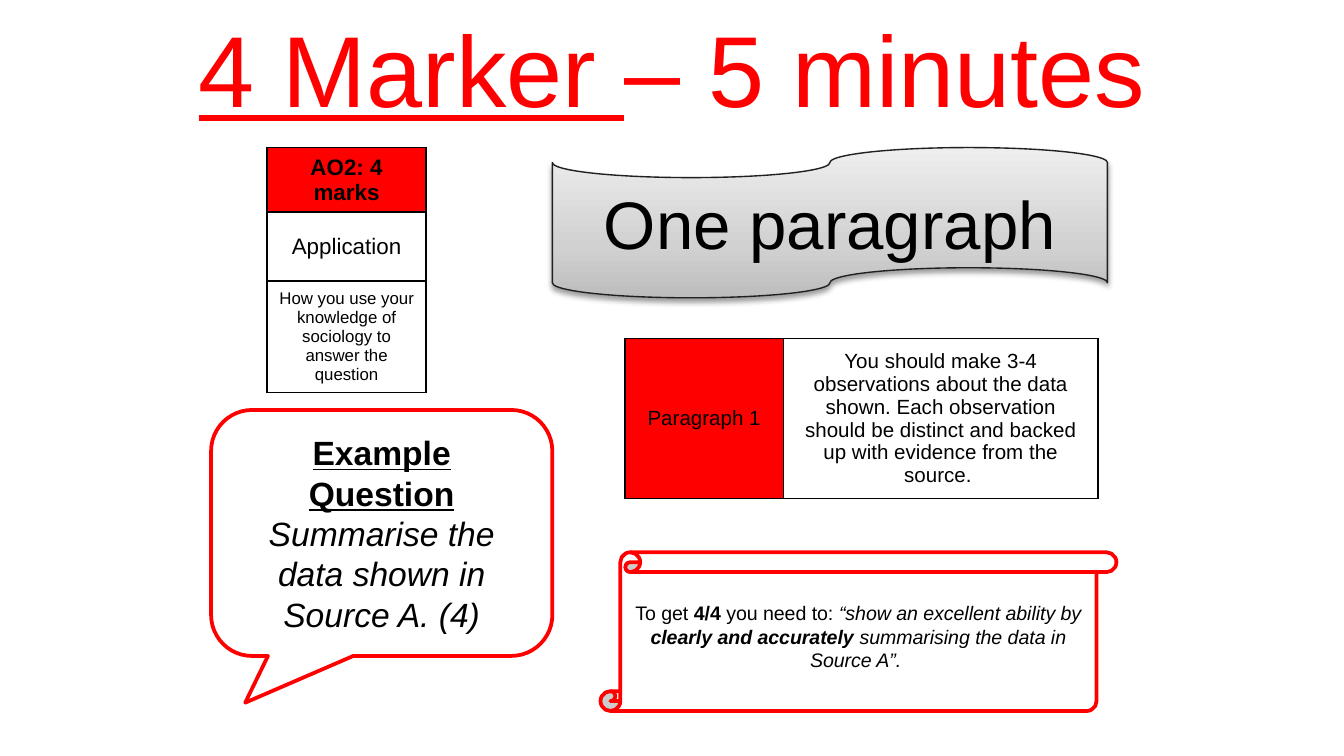
"""Build a revision slide on answering a four-mark question."""
from lxml import etree
from pptx import Presentation
from pptx.dml.color import RGBColor
from pptx.enum.shapes import MSO_SHAPE
from pptx.enum.text import MSO_ANCHOR, PP_ALIGN
from pptx.oxml import parse_xml
from pptx.oxml.ns import nsdecls, qn
from pptx.util import Cm, Pt

TAPE = MSO_SHAPE.FLOWCHART_PUNCHED_TAPE
CALLOUT = MSO_SHAPE.ROUNDED_RECTANGULAR_CALLOUT
SCROLL = MSO_SHAPE.VERTICAL_SCROLL
MIDDLE = MSO_ANCHOR.MIDDLE
CENTER = PP_ALIGN.CENTER
FONT = "Arial"
RED, BLACK, WHITE = "FF0000", "000000", "FFFFFF"
SILVER_STOPS = [(0, "BDBDBD"), (35, "D1D1D1"), (100, "EEEEEE")]


def rgb(value):
    """Turn a hex string into a colour."""
    return RGBColor.from_string(value)


def write_text(frame, paragraphs, size, color=BLACK):
    """Write centred paragraphs of (text, style) runs; style letters are b, i and u."""
    frame.word_wrap = True
    for index, runs in enumerate(paragraphs):
        para = frame.paragraphs[0] if index == 0 else frame.add_paragraph()
        para.alignment = CENTER
        for text, style in runs:
            span = para.add_run()
            span.text = text
            font = span.font
            font.name, font.size = FONT, Pt(size)
            font.color.rgb = rgb(color)
            font.bold = "b" in style
            font.italic = "i" in style
            font.underline = "u" in style


def add_title(page, runs):
    """Add the large heading across the top."""
    box = page.shapes.add_textbox(Cm(3.18), Cm(0), Cm(19.05), Cm(2.57))
    write_text(box.text_frame, [runs], 54, RED)


def add_panel(page, kind, place, paragraphs, size, line=RED, width=2):
    """Add a white outlined preset shape with centred text."""
    panel = page.shapes.add_shape(kind, *map(Cm, place))
    panel.shadow.inherit = False
    panel.fill.solid()
    panel.fill.fore_color.rgb = rgb(WHITE)
    panel.line.color.rgb = rgb(line)
    panel.line.width = Pt(width)
    panel.text_frame.vertical_anchor = MIDDLE
    write_text(panel.text_frame, paragraphs, size)
    return panel


def shade_banner(banner, stops):
    """Give the banner an upward gradient and a soft shadow."""
    properties = banner._element.spPr
    stop_xml = "".join(
        f'<a:gs pos="{position * 1000}"><a:srgbClr val="{color}"/></a:gs>'
        for position, color in stops)
    gradient = parse_xml(
        f'<a:gradFill {nsdecls("a")} rotWithShape="1"><a:gsLst>{stop_xml}</a:gsLst>'
        '<a:lin ang="16200000" scaled="1"/></a:gradFill>')
    properties.replace(properties.find(qn("a:solidFill")), gradient)
    effects = properties.find(qn("a:effectLst"))
    effects.append(parse_xml(
        f'<a:outerShdw {nsdecls("a")} blurRad="{Pt(3.1)}" dist="{Pt(1.6)}" '
        'dir="5400000" rotWithShape="0"><a:srgbClr val="000000">'
        '<a:alpha val="38000"/></a:srgbClr></a:outerShdw>'))


def border_cell(cell):
    """Draw a thin black line on every side of a cell."""
    properties = cell._tc.get_or_add_tcPr()
    for index, side in enumerate(("lnL", "lnR", "lnT", "lnB")):
        edge = etree.Element(qn(f"a:{side}"), w=str(Pt(1)))
        fill = etree.SubElement(edge, qn("a:solidFill"))
        etree.SubElement(fill, qn("a:srgbClr"), val=BLACK)
        properties.insert(index, edge)


def add_grid(page, left, top, widths, heights, rows):
    """Add a table whose cells are (text, style, size, fill)."""
    grid = page.shapes.add_table(
        len(heights), len(widths), Cm(left), Cm(top),
        Cm(sum(widths)), Cm(sum(heights))).table
    grid.first_row = grid.horz_banding = False
    for column, width in zip(grid.columns, widths):
        column.width = Cm(width)
    for row, height, contents in zip(grid.rows, heights, rows):
        row.height = Cm(height)
        for cell, (text, style, size, fill) in zip(row.cells, contents):
            cell.fill.solid()
            cell.fill.fore_color.rgb = rgb(fill)
            cell.vertical_anchor = MIDDLE
            cell.margin_left = cell.margin_right = Cm(0.19)
            cell.margin_top = cell.margin_bottom = Cm(0.1)
            write_text(cell.text_frame, [[(text, style)]], size)
            border_cell(cell)


def main():
    """Assemble and save the slide."""
    deck = Presentation()
    deck.slide_width, deck.slide_height = Cm(25.4), Cm(14.29)
    page = deck.slides.add_slide(deck.slide_layouts[6])

    add_title(page, [("4 Marker ", "u"), ("– 5 minutes", "")])
    add_grid(page, 5.05, 2.79, [3], [1.19, 1.3, 2.08], [
        [("AO2: 4 marks", "b", 12, RED)],
        [("Application", "", 12, WHITE)],
        [("How you use your knowledge of sociology to answer the question",
          "", 9, WHITE)],
    ])
    banner = add_panel(page, TAPE, (10.44, 2.79, 10.49, 2.84),
                       [[("One paragraph", "")]], 36, "202020", 0.75)
    shade_banner(banner, SILVER_STOPS)

    question = add_panel(page, CALLOUT, (3.99, 7.75, 6.45, 4.65), [
        [("Example Question", "bu")],
        [("Summarise the data shown in Source A. (4)", "i")],
    ], 18)
    question.adjustments[0] = -0.4
    question.adjustments[1] = 0.69

    add_grid(page, 11.81, 6.4, [3, 5.94], [3.02], [[
        ("Paragraph 1", "", 11, RED),
        ("You should make 3-4 observations about the data shown. Each observation "
         "should be distinct and backed up with evidence from the source. ",
         "", 11, WHITE),
    ]])
    add_panel(page, SCROLL, (11.35, 10.44, 9.75, 3), [[
        ("To get ", ""), ("4/4", "b"), (" you need to: ", ""),
        ("“show an excellent ability by ", "i"),
        ("clearly and accurately ", "bi"),
        ("summarising the data in Source A”. ", "i"),
    ]], 10.5)
    deck.save("out.pptx")


if __name__ == "__main__":
    main()
